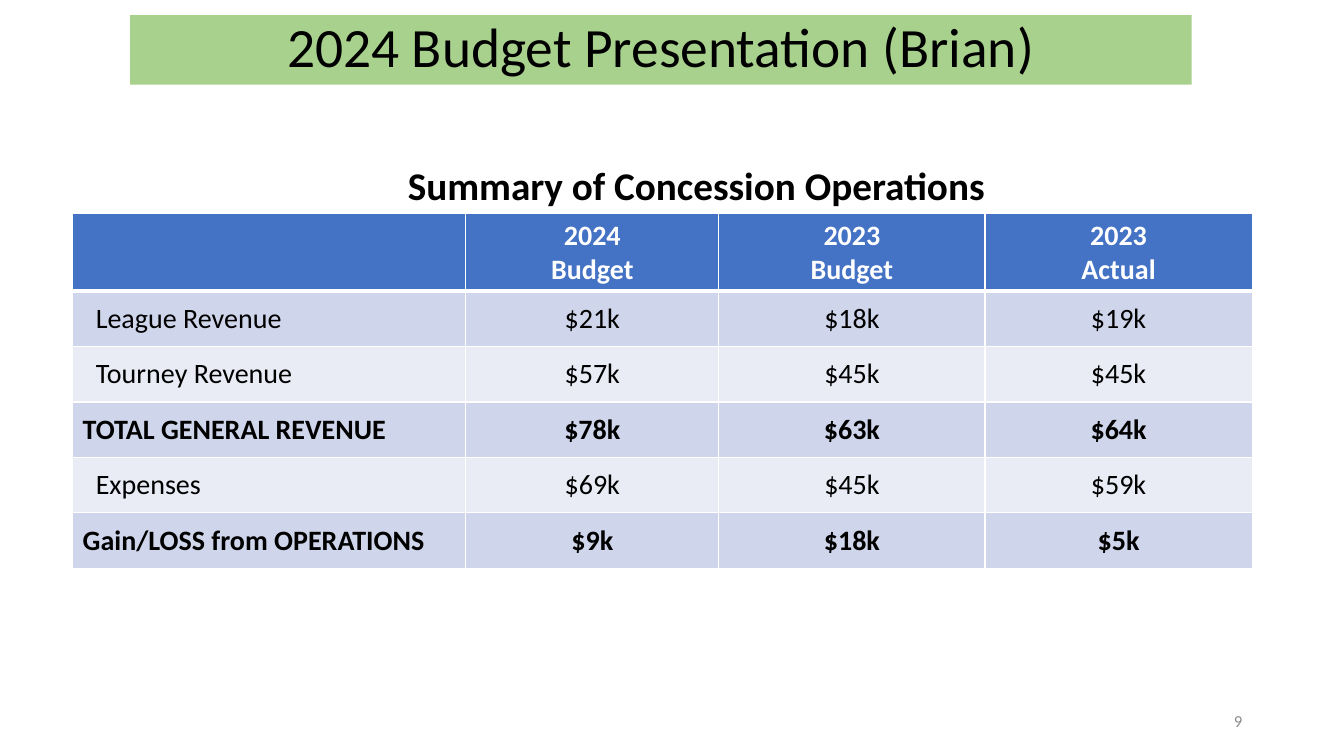
from dataclasses import dataclass

from lxml.etree import SubElement
from pptx import Presentation
from pptx.dml.color import RGBColor
from pptx.enum.text import MSO_ANCHOR as Anchor, MSO_AUTO_SIZE as AutoSize, PP_ALIGN as Align
from pptx.oxml.ns import qn
from pptx.util import Inches, Pt

TITLE = "2024 Budget Presentation (Brian)"
SUBTITLE = "Summary of Concession Operations"
PAGE_NUMBER = "9"
HEADINGS = ("", "2024\vBudget", "2023\vBudget", "2023\vActual")
# label, amounts, is a total
BUDGET_LINES = [
    ("League Revenue", ("$21k", "$18k", "$19k"), False),
    ("Tourney Revenue", ("$57k", "$45k", "$45k"), False),
    ("TOTAL GENERAL REVENUE", ("$78k", "$63k", "$64k"), True),
    ("Expenses", ("$69k", "$45k", "$59k"), False),
    ("Gain/LOSS from OPERATIONS", ("$9k", "$18k", "$5k"), True),
]

COLUMN_WIDTHS = (3.9, 2.51, 2.64, 2.65)
HEADER_HEIGHT, ROW_HEIGHT = 0.76, 0.55
CELL_MARGIN, ITEM_INDENT = 0.1, 0.13
THIN, THICK = 1, 3


@dataclass(frozen=True)
class Theme:
    font: str = "Calibri"
    title_fill: str = "A9D18E"
    header_fill: str = "4472C4"
    bands: tuple = ("CFD5EA", "E9EBF5")
    ink: str = "000000"
    white: str = "FFFFFF"
    muted: str = "8C8C8C"
    title_size: float = 39.6
    subtitle_size: float = 28
    table_size: float = 20
    number_size: float = 12


THEME = Theme()


def write(frame, text, *, size, color=THEME.ink, bold=False, align=Align.CENTER,
          anchor=Anchor.MIDDLE, spacing=1.0):
    frame.word_wrap = True
    frame.vertical_anchor = anchor
    paragraph = frame.paragraphs[0]
    paragraph.text = text
    paragraph.alignment = align
    paragraph.line_spacing = spacing
    for run in paragraph.runs:
        run.font.name = THEME.font
        run.font.size = Pt(size)
        run.font.bold = bold
        run.font.color.rgb = RGBColor.from_string(color)


def place(shape, left, top, width, height):
    shape.left, shape.top = Inches(left), Inches(top)
    shape.width, shape.height = Inches(width), Inches(height)


def paint_cell(cell, color, top=THIN, bottom=THIN):
    """Give the cell its borders, then its fill, in the order the schema needs."""
    properties = cell._tc.get_or_add_tcPr()
    for side, weight in (("L", THIN), ("R", THIN), ("T", top), ("B", bottom)):
        border = SubElement(properties, qn(f"a:ln{side}"), w=str(Pt(weight)))
        line_fill = SubElement(border, qn("a:solidFill"))
        SubElement(line_fill, qn("a:srgbClr"), val=THEME.white)
    cell.fill.solid()
    cell.fill.fore_color.rgb = RGBColor.from_string(color)


def add_title(slide):
    title = slide.shapes.title
    place(title, 1.29, 0.15, 10.53, 0.69)
    title.fill.solid()
    title.fill.fore_color.rgb = RGBColor.from_string(THEME.title_fill)
    title.text_frame.auto_size = AutoSize.NONE
    write(title.text_frame, TITLE, size=THEME.title_size, spacing=0.9)


def add_label(slide, text, left, top, width, height, **text_format):
    label = slide.shapes.add_textbox(*map(Inches, (left, top, width, height)))
    write(label.text_frame, text, **text_format)


def add_budget_table(slide):
    height = HEADER_HEIGHT + ROW_HEIGHT * len(BUDGET_LINES)
    budget = slide.shapes.add_table(
        len(BUDGET_LINES) + 1, len(HEADINGS),
        Inches(0.72), Inches(2.12), Inches(sum(COLUMN_WIDTHS)), Inches(height)).table
    for column, width in zip(budget.columns, COLUMN_WIDTHS):
        column.width = Inches(width)
    for index, row in enumerate(budget.rows):
        row.height = Inches(ROW_HEIGHT if index else HEADER_HEIGHT)

    for column, heading in enumerate(HEADINGS):
        cell = budget.cell(0, column)
        paint_cell(cell, THEME.header_fill, bottom=THICK)
        write(cell.text_frame, heading, size=THEME.table_size, color=THEME.white, bold=True)
        cell.vertical_anchor = Anchor.MIDDLE

    for row, (label, amounts, is_total) in enumerate(BUDGET_LINES, start=1):
        for column, entry in enumerate((label, *amounts)):
            cell = budget.cell(row, column)
            paint_cell(cell, THEME.bands[(row - 1) % 2], top=THICK if row == 1 else THIN)
            write(cell.text_frame, entry, size=THEME.table_size, bold=is_total,
                  align=Align.CENTER if column else Align.LEFT)
            cell.vertical_anchor = Anchor.MIDDLE
        if not is_total:
            budget.cell(row, 0).margin_left = Inches(CELL_MARGIN + ITEM_INDENT)


def main():
    deck = Presentation()
    deck.slide_width, deck.slide_height = Inches(13.33), Inches(7.5)
    slide = deck.slides.add_slide(deck.slide_layouts[5])
    add_title(slide)
    add_label(slide, SUBTITLE, 1.16, 1.55, 11.49, 0.57,
              size=THEME.subtitle_size, bold=True, anchor=Anchor.TOP)
    add_label(slide, PAGE_NUMBER, 9.42, 6.95, 3, 0.4,
              size=THEME.number_size, color=THEME.muted, align=Align.RIGHT)
    add_budget_table(slide)
    deck.save("out.pptx")


if __name__ == "__main__":
    main()
